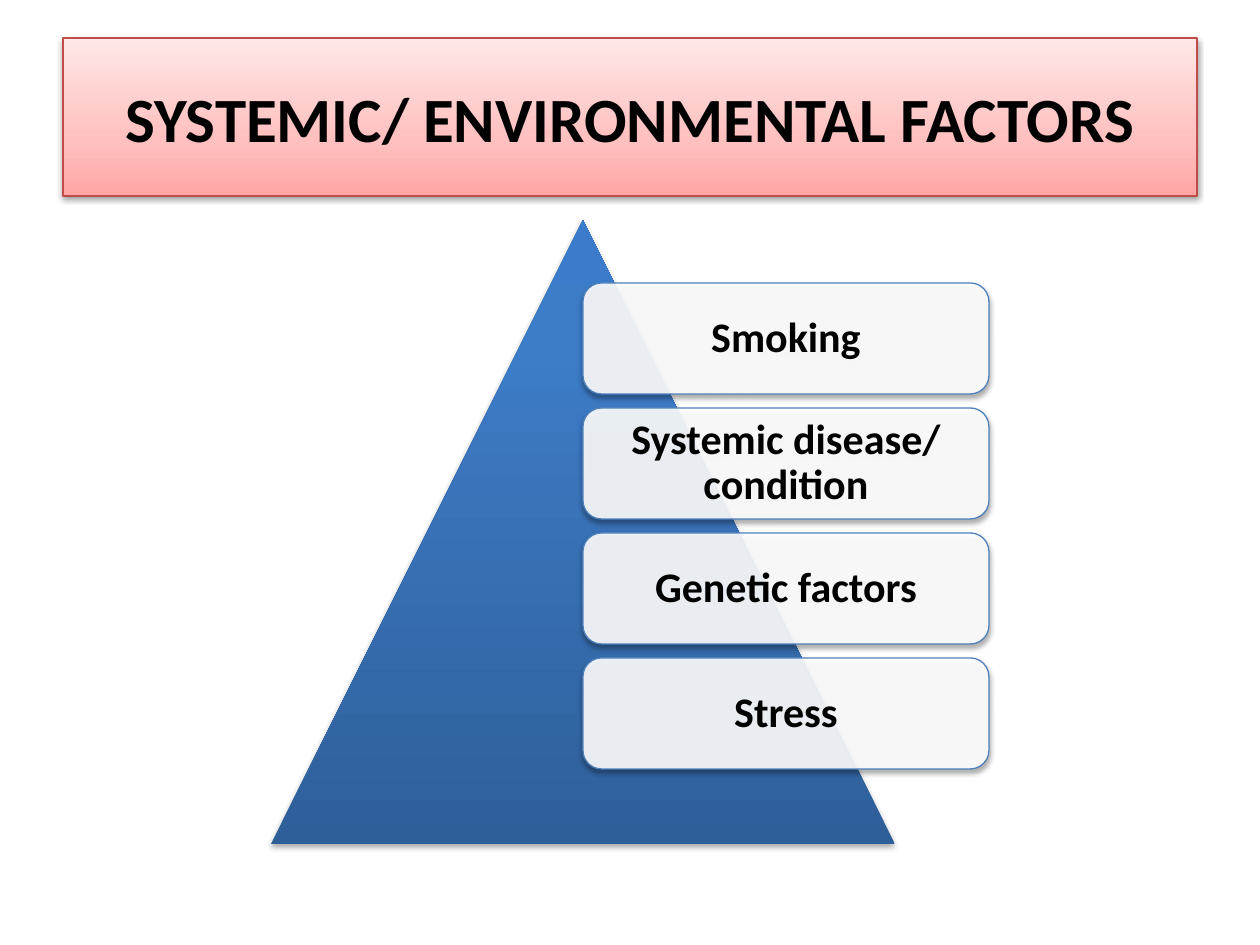
import pptx
import pptx.util
from lxml import etree
from pptx.dml.color import RGBColor
from pptx.enum.shapes import MSO_SHAPE
from pptx.enum.text import MSO_ANCHOR, PP_ALIGN
from pptx.oxml.ns import qn

TITLE = "SYSTEMIC/ ENVIRONMENTAL FACTORS"
FACTORS = ["Smoking", "Systemic disease/ condition", "Genetic factors", "Stress"]

COLORS = {"text": "000000", "shadow": "000000", "title_line": "BF4C48",
          "card": "FFFFFF", "card_line": "4F81BD"}
# Gradient stops in percent, from bottom to top
TITLE_STOPS = [(0, "FFA6A5"), (35, "FFC0BF"), (100, "FFE7E7")]
PYRAMID_STOPS = [(0, "2F5F99"), (80, "3D7CC7"), (100, "3A7CCB")]

# Left, top, width, height in px
TITLE_BOX = (63, 38, 1134, 158)
PYRAMID_BOX = (271, 220, 624, 624)
FIRST_CARD = (583, 283, 406, 111)
CARD_GAP = 14
CARD_INSET = 8
FONT = "Calibri"


def px(length):
    return round(length * 914400 / 126)


def color_element(parent, color, alpha=100):
    node = etree.SubElement(parent, qn("a:srgbClr"), val=color)
    if alpha < 100:
        etree.SubElement(node, qn("a:alpha"), val=str(alpha * 1000))


def fill_gradient(shape, stops):
    shape.fill.gradient()
    gradient = shape._element.spPr.find(qn("a:gradFill"))
    for child in list(gradient):
        gradient.remove(child)
    stop_list = etree.SubElement(gradient, qn("a:gsLst"))
    for position, color in stops:
        color_element(etree.SubElement(stop_list, qn("a:gs"), pos=str(position * 1000)), color)
    etree.SubElement(gradient, qn("a:lin"), ang="16200000", scaled="0")


def fill_solid(shape, color, alpha):
    shape.fill.solid()
    shape.fill.fore_color.rgb = RGBColor.from_string(color)
    node = shape._element.spPr.find(qn("a:solidFill")).find(qn("a:srgbClr"))
    etree.SubElement(node, qn("a:alpha"), val=str(alpha * 1000))


def outline(shape, color):
    shape.line.color.rgb = RGBColor.from_string(color)
    shape.line.width = pptx.util.Pt(0.75)


def drop_shadow(shape, alpha=35, distance=1.8):
    shape.shadow.inherit = False
    effects = shape._element.spPr.find(qn("a:effectLst"))
    shadow = etree.SubElement(effects, qn("a:outerShdw"), blurRad=str(pptx.util.Pt(3.1)),
                              dist=str(pptx.util.Pt(distance)), dir="5400000", rotWithShape="0")
    color_element(shadow, COLORS["shadow"], alpha)


def write(shape, text, size, line_spacing=None, inset=None):
    frame = shape.text_frame
    frame.word_wrap = True
    frame.vertical_anchor = MSO_ANCHOR.MIDDLE
    if inset is not None:
        frame.margin_left = frame.margin_right = px(inset)
        frame.margin_top = frame.margin_bottom = px(inset)
    paragraph = frame.paragraphs[0]
    paragraph.alignment = PP_ALIGN.CENTER
    if line_spacing:
        paragraph.line_spacing = line_spacing
    run = paragraph.add_run()
    run.text = text
    run.font.name = FONT
    run.font.size = pptx.util.Pt(size)
    run.font.bold = True
    run.font.color.rgb = RGBColor.from_string(COLORS["text"])


def add_title(slide):
    title = slide.shapes.title
    title.left, title.top, title.width, title.height = map(px, TITLE_BOX)
    fill_gradient(title, TITLE_STOPS)
    outline(title, COLORS["title_line"])
    drop_shadow(title, alpha=38, distance=1.6)
    write(title, TITLE, 36)


def add_pyramid_list(slide):
    group = slide.shapes.add_group_shape()
    pyramid = group.shapes.add_shape(MSO_SHAPE.ISOSCELES_TRIANGLE, *map(px, PYRAMID_BOX))
    fill_gradient(pyramid, PYRAMID_STOPS)
    pyramid.line.fill.background()
    drop_shadow(pyramid)

    left, top, width, height = FIRST_CARD
    for row, factor in enumerate(FACTORS):
        card_top = top + row * (height + CARD_GAP)
        card = group.shapes.add_shape(MSO_SHAPE.ROUNDED_RECTANGLE,
                                      *map(px, (left, card_top, width, height)))
        fill_solid(card, COLORS["card"], alpha=90)
        outline(card, COLORS["card_line"])
        drop_shadow(card)
        write(card, factor, 24, line_spacing=0.9, inset=CARD_INSET)


def main():
    deck = pptx.Presentation()
    deck.slide_width, deck.slide_height = px(1260), px(945)
    slide = deck.slides.add_slide(deck.slide_layouts[5])
    add_title(slide)
    add_pyramid_list(slide)
    deck.save("out.pptx")


if __name__ == "__main__":
    main()
